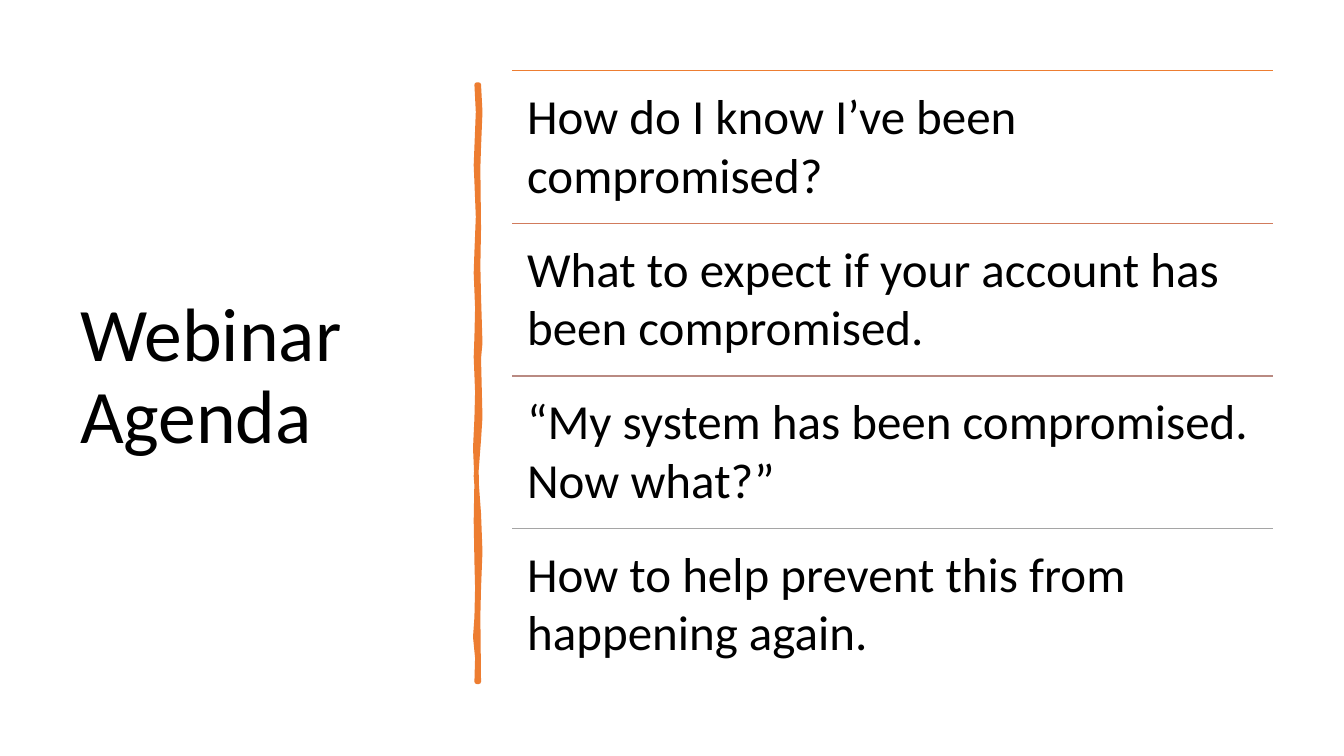
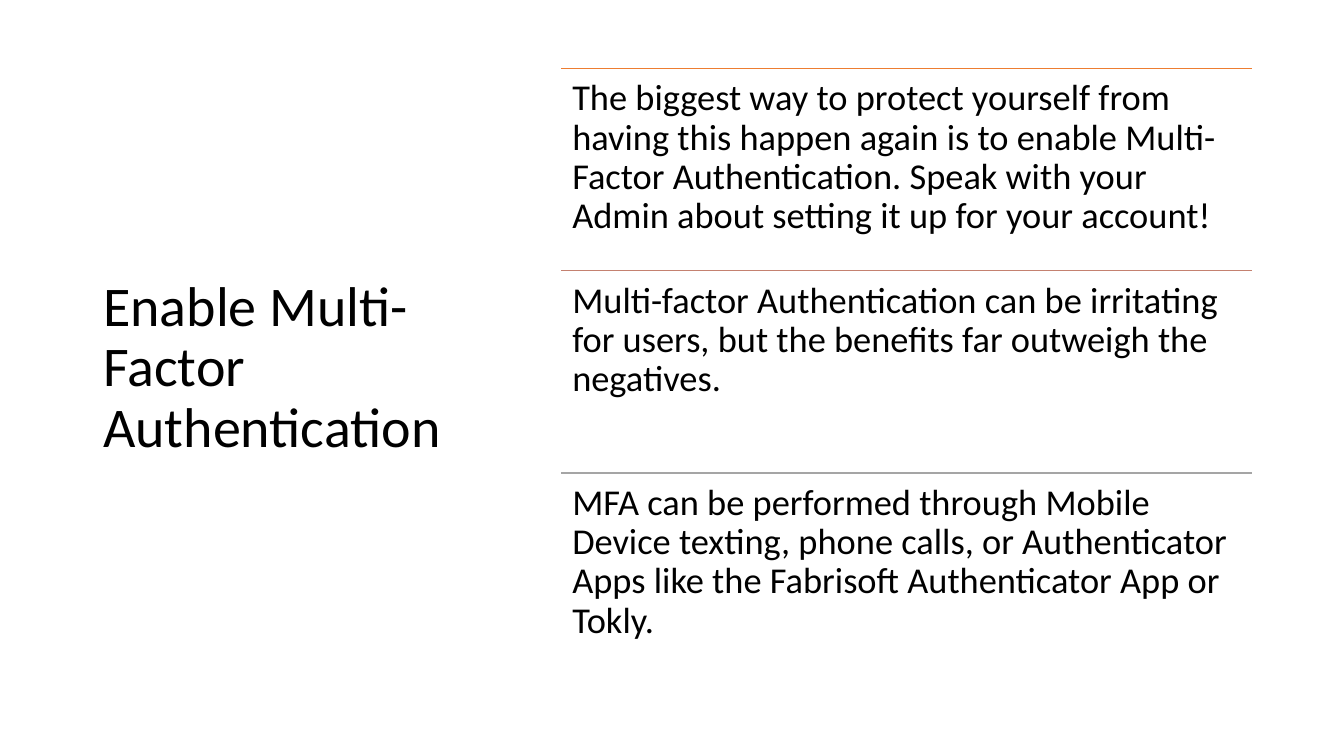
from lxml.etree import SubElement
from pptx import Presentation
from pptx.dml.color import RGBColor
from pptx.enum.shapes import MSO_CONNECTOR
from pptx.enum.text import MSO_ANCHOR, MSO_AUTO_SIZE, PP_ALIGN
from pptx.oxml.ns import qn
from pptx.util import Pt

ORANGE, GREY, BLACK = "ED7D31", "A5A5A5", "000000"

AGENDA = [
    ("How do I know I’ve been compromised?", ORANGE),
    ("What to expect if your account has been compromised.", "D17B5C"),
    ("“My system has been compromised. Now what?”", "B98A82"),
    ("How to help prevent this from happening again.", GREY),
]
ADVICE = [
    ("The biggest way to protect yourself from having this happen again is to "
     "enable Multi-Factor Authentication. Speak with your Admin about setting "
     "it up for your account!", ORANGE),
    ("Multi-factor Authentication can be irritating for users, but the "
     "benefits far outweigh the negatives.", "C48170"),
    ("MFA can be performed through Mobile Device texting, phone calls, or "
     "Authenticator Apps like the Fabrisoft Authenticator App or Tokly.", GREY),
]
# Outline of the hand-drawn stroke: down the right edge, up the left one
STROKE = [
    (342, 60.5), (343, 80), (342, 105), (341.5, 120), (342, 163),
    (341.5, 190), (342, 212), (343, 245), (342, 256), (343, 298),
    (342, 314), (340, 340), (342, 367), (343, 394), (342, 420),
    (341.5, 440), (342, 487),
    (340.5, 487), (341, 470), (339.5, 455), (340.5, 441), (341, 420),
    (340.5, 401), (340, 372), (340.5, 343), (339.5, 320), (340.5, 299),
    (341, 280), (340, 255), (340.5, 241), (341, 220), (340, 195),
    (340.5, 180), (341.5, 155), (340.5, 130), (340, 118), (341.5, 80),
    (340.5, 60.5),
]


def color(code):
    return RGBColor.from_string(code)


def write(frame, text, size, spacing=1.0, inset=None, anchor=MSO_ANCHOR.TOP):
    """Fill a text frame with one left-aligned paragraph."""
    frame.word_wrap = True
    frame.auto_size = MSO_AUTO_SIZE.NONE
    frame.vertical_anchor = anchor
    if inset is not None:
        frame.margin_left = frame.margin_right = Pt(inset)
        frame.margin_top = frame.margin_bottom = Pt(inset)
    para = frame.paragraphs[0]
    para.alignment = PP_ALIGN.LEFT
    para.line_spacing = spacing
    run = para.add_run()
    run.text = text
    run.font.name = "Calibri"
    run.font.size = Pt(size)
    run.font.color.rgb = color(BLACK)


class Deck:
    """Holds the shared style and the slide being built."""

    def __init__(self):
        self.file = Presentation()
        self.file.slide_width = Pt(960)
        self.file.slide_height = Pt(540)
        self.slide = None

    def page(self, title, box, size):
        """Start a slide with its title placed in box."""
        self.slide = self.file.slides.add_slide(self.file.slide_layouts[5])
        shape = self.slide.shapes.title
        shape.left, shape.top, shape.width, shape.height = map(Pt, box)
        write(shape.text_frame, title, size, spacing=0.9,
              anchor=MSO_ANCHOR.MIDDLE)

    def rule(self, left, top, width, code):
        line = self.slide.shapes.add_connector(
            MSO_CONNECTOR.STRAIGHT, Pt(left), Pt(top), Pt(left + width), Pt(top))
        line.line.color.rgb = color(code)
        line.line.width = Pt(1)
        SubElement(line._element.spPr, qn("a:effectLst"))

    def text(self, text, box, **style):
        shape = self.slide.shapes.add_textbox(*map(Pt, box))
        write(shape.text_frame, text, **style)

    def rows(self, items, left, top, width, pitch, **style):
        """Stack equal rows, each a coloured rule with text below it."""
        for i, (text, code) in enumerate(items):
            y = top + i * pitch
            self.rule(left, y, width, code)
            self.text(text, (left, y, width, pitch), **style)

    def stroke(self, points, code):
        """Draw a closed outline with rounded corners."""
        dots = [(Pt(x), Pt(y)) for x, y in points]
        pen = self.slide.shapes.build_freeform(*dots[0])
        pen.add_line_segments(dots[1:], close=True)
        shape = pen.convert_to_shape()
        shape.shadow.inherit = False
        shape.fill.solid()
        shape.fill.fore_color.rgb = color(code)
        shape.line.color.rgb = color(code)
        shape.line.width = Pt(3.25)
        SubElement(shape.line._get_or_add_ln(), qn("a:round"))

    def save(self):
        self.file.save("out.pptx")


def main():
    deck = Deck()

    deck.page("Webinar Agenda", (50, 50, 269, 440), 54)
    deck.stroke(STROKE, ORANGE)
    deck.rows(AGENDA, 366, 50.5, 543.5, 109, size=35, inset=10.5)

    deck.page("Enable Multi-Factor Authentication", (66.5, 44, 265.5, 438.5), 40)
    deck.rows(ADVICE, 401, 49, 493, 144.4, size=26, inset=7.8, spacing=0.9)

    deck.save()


if __name__ == "__main__":
    main()
